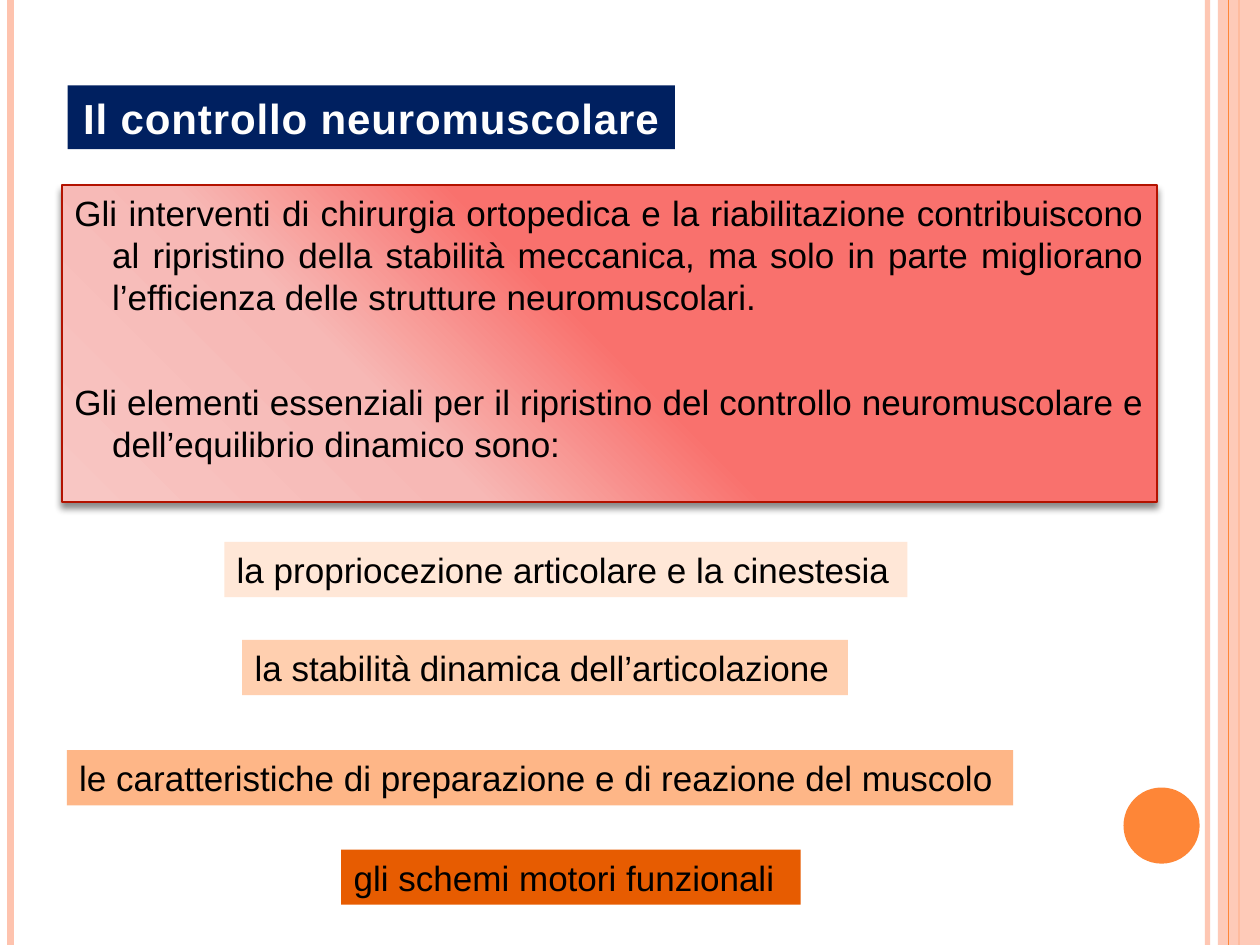
"""Build the slide on neuromuscular control."""
from lxml.etree import SubElement
from pptx import Presentation
from pptx.dml.color import RGBColor
from pptx.enum.shapes import MSO_CONNECTOR, MSO_SHAPE
from pptx.enum.text import MSO_ANCHOR, MSO_AUTO_SIZE, PP_ALIGN
from pptx.oxml import parse_xml
from pptx.oxml.ns import nsdecls, qn
from pptx.util import Pt

PEACH = RGBColor(0xFE, 0xC3, 0xAE)
ORANGE = RGBColor(0xFE, 0x86, 0x37)
NAVY = RGBColor(0x00, 0x20, 0x60)
RED = RGBColor(0xB3, 0x12, 0x00)
BLACK = RGBColor(0x00, 0x00, 0x00)
OFF_WHITE = RGBColor(0xFE, 0xFE, 0xFE)
LABEL_FILLS = [
    RGBColor(0xFF, 0xE7, 0xD7),
    RGBColor(0xFF, 0xCF, 0xAF),
    RGBColor(0xFE, 0xB6, 0x87),
    RGBColor(0xE7, 0x5C, 0x01),
]

TITLE_FONT = {"name": "Arial", "size": Pt(24), "bold": True}
TEXT_FONT = {"name": "Arial", "size": Pt(20), "bold": False}
FRAME_FORMAT = {
    "auto_size": MSO_AUTO_SIZE.NONE,
    "margin_left": Pt(7.2),
    "margin_right": Pt(7.2),
    "margin_top": Pt(3.6),
    "margin_bottom": Pt(3.6),
}


def set_format(target, values):
    for name, value in values.items():
        setattr(target, name, value)


def set_opacity(fill_parent, percent):
    color = fill_parent.find(".//" + qn("a:srgbClr"))
    SubElement(color, qn("a:alpha"), val=str(percent * 1000))


def_shadow = (
    '<a:effectLst %s><a:outerShdw blurRad="%d" dist="%d" dir="5400000">'
    '<a:srgbClr val="000000"><a:alpha val="%d"/></a:srgbClr>'
    "</a:outerShdw></a:effectLst>"
)

presentation = Presentation()
presentation.slide_width = Pt(720)
presentation.slide_height = Pt(540)
slide = presentation.slides.add_slide(presentation.slide_layouts[1])
shapes = slide.shapes

for x, width, color, opacity in [
    (690, 3, PEACH, 93),
    (6, 4.5, PEACH, 100),
    (708, 1.5, ORANGE, 100),
    (None, None, PEACH, 87),
    (702, 0.75, ORANGE, 100),
]:
    if x is None:
        stripe = shapes.add_shape(MSO_SHAPE.RECTANGLE, Pt(696), 0, Pt(24), Pt(540))
        stripe.shadow.inherit = False
        stripe.fill.solid()
        stripe.fill.fore_color.rgb = color
        stripe.line.fill.background()
    else:
        stripe = shapes.add_connector(MSO_CONNECTOR.STRAIGHT, Pt(x), 0, Pt(x), Pt(540))
        stripe.line.width = Pt(width)
        stripe.line.color.rgb = color
        SubElement(stripe._element.spPr, qn("a:effectLst"))
    set_opacity(stripe._element.spPr, opacity)

circle = shapes.add_shape(MSO_SHAPE.OVAL, Pt(642), Pt(450), Pt(43.5), Pt(43.5))
circle.shadow.inherit = False
circle.fill.solid()
circle.fill.fore_color.rgb = ORANGE
circle.line.fill.background()

body = slide.placeholders[1]
set_format(body, {"left": Pt(35.3), "top": Pt(105.8), "width": Pt(625.7), "height": Pt(181.2)})
body.line.color.rgb = RED
body.line.width = Pt(1)
body_properties = body._element.spPr
body_properties.find(qn("a:ln")).addprevious(parse_xml(
    f'<a:gradFill {nsdecls("a")} rotWithShape="1"><a:gsLst>'
    '<a:gs pos="0"><a:srgbClr val="F8C6C3"/></a:gs>'
    '<a:gs pos="30000"><a:srgbClr val="F7B8B5"/></a:gs>'
    '<a:gs pos="50000"><a:srgbClr val="F9716D"/></a:gs>'
    '<a:gs pos="100000"><a:srgbClr val="F9716D"/></a:gs></a:gsLst>'
    '<a:path path="circle"><a:fillToRect t="100000" r="100000"/></a:path></a:gradFill>'
))
body_properties.append(parse_xml(def_shadow % (nsdecls("a"), 50800, 38100, 45000)))
set_format(body.text_frame, FRAME_FORMAT | {"word_wrap": True, "vertical_anchor": MSO_ANCHOR.TOP})
body.text_frame.text = (
    "Gli interventi di chirurgia ortopedica e la riabilitazione contribuiscono "
    "al ripristino della stabilità meccanica, ma solo in parte migliorano "
    "l’efficienza delle strutture neuromuscolari.\n"
    "Gli elementi essenziali per il ripristino del controllo neuromuscolare e "
    "dell’equilibrio dinamico sono:"
)
for paragraph, gap in zip(body.text_frame.paragraphs, [0, 36]):
    set_format(paragraph, {
        "alignment": PP_ALIGN.JUSTIFY,
        "line_spacing": Pt(24),
        "space_before": Pt(gap),
    })
    properties = paragraph._p.get_or_add_pPr()
    properties.set("marL", str(Pt(21.6)))
    properties.set("indent", str(-Pt(21.6)))
    SubElement(properties, qn("a:buNone"))
    set_format(paragraph.runs[0].font, TEXT_FONT)
    paragraph.runs[0].font.color.rgb = BLACK

title = shapes.title
set_format(title, {"left": Pt(38.7), "top": Pt(48.8), "width": Pt(347), "height": Pt(36.4)})
title.fill.solid()
title.fill.fore_color.rgb = NAVY
set_format(title.text_frame, FRAME_FORMAT | {"word_wrap": False, "vertical_anchor": MSO_ANCHOR.MIDDLE})
title.text_frame.text = "Il controllo neuromuscolare"
title_paragraph = title.text_frame.paragraphs[0]
title_paragraph.alignment = PP_ALIGN.CENTER
title_run = title_paragraph.runs[0]
set_format(title_run.font, TITLE_FONT)
title_run.font.color.rgb = OFF_WHITE
run_properties = title_run._r.get_or_add_rPr()
run_properties.set("spc", "50")
run_properties.find(qn("a:solidFill")).addnext(
    parse_xml(def_shadow % (nsdecls("a"), 38100, 19050, 40000))
)

labels = [
    ("la propriocezione articolare e la cinestesia", 128.2, 309.7, 390.4),
    ("la stabilità dinamica dell’articolazione", 138.4, 365.7, 346.2),
    ("le caratteristiche di preparazione e di reazione del muscolo", 38.2, 428.7, 540.8),
    ("gli schemi motori funzionali", 195, 485.5, 262.6),
]
for (text, left, top, width), color in zip(labels, LABEL_FILLS):
    label = shapes.add_shape(MSO_SHAPE.RECTANGLE, Pt(left), Pt(top), Pt(width), Pt(31.5))
    label.shadow.inherit = False
    label.fill.solid()
    label.fill.fore_color.rgb = color
    label.line.fill.background()
    set_format(label.text_frame, FRAME_FORMAT | {"word_wrap": True, "vertical_anchor": MSO_ANCHOR.MIDDLE})
    paragraph = label.text_frame.paragraphs[0]
    paragraph.text = text
    paragraph.alignment = PP_ALIGN.JUSTIFY
    set_format(paragraph.font, TEXT_FONT)
    paragraph.font.color.rgb = BLACK
    set_format(paragraph.runs[0].font, TEXT_FONT)
    paragraph.runs[0].font.color.rgb = BLACK

presentation.save("out.pptx")
